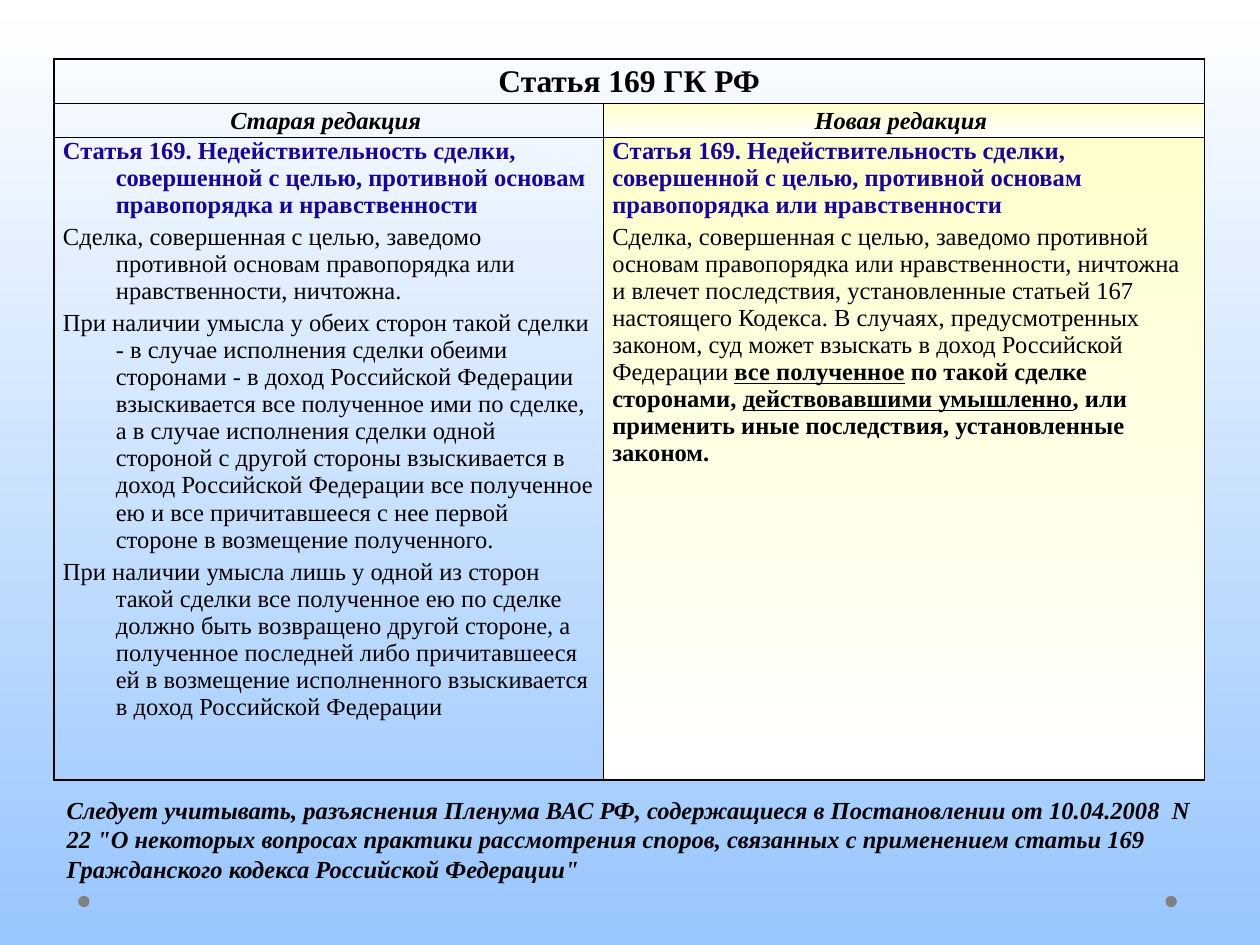
from dataclasses import dataclass

from lxml import etree
from pptx import Presentation
from pptx.dml.color import RGBColor
from pptx.enum.shapes import MSO_SHAPE
from pptx.enum.text import PP_ALIGN
from pptx.oxml.ns import qn
from pptx.util import Emu, Inches, Pt

FONT = "Times New Roman"
BLACK, BLUE, GRAY = "000000", "1704A0", "808080"
WHITE, CREAM, SKY = "FFFFFF", "FFFFCC", "98C6FE"
OVAL = MSO_SHAPE.OVAL
CENTER = PP_ALIGN.CENTER
BLANK_LAYOUT = 6

LEFT, TOP, WIDTH = 0.43, 0.47, 9.14
COLUMN_WIDTHS = (4.36, 4.77)
ROW_HEIGHTS = (0.35, 0.27, 5.1)
HANGING = 0.42


@dataclass(frozen=True)
class Run:
    text: str
    bold: bool = False
    underline: bool = False


@dataclass(frozen=True)
class Block:
    """One paragraph with its formatting."""
    runs: tuple[Run, ...]
    size: int = 14
    color: str = BLACK
    italic: bool = False
    centered: bool = False
    hanging: float = 0
    space_before: float = 0


def heading(text: str, size: int = 14, italic: bool = True) -> Block:
    return Block((Run(text, bold=True),), size, italic=italic, centered=True)


def body(*runs: Run, color: str = BLACK, hanging: float = 0) -> Block:
    return Block(runs, color=color, hanging=hanging, space_before=2.8)


OLD_TEXT = (
    body(Run("Статья 169. Недействительность сделки, совершенной с целью, противной "
             "основам правопорядка и нравственности", bold=True),
         color=BLUE, hanging=HANGING),
    body(Run("Сделка, совершенная с целью, заведомо противной основам правопорядка "
             "или нравственности, ничтожна."), hanging=HANGING),
    body(Run("При наличии умысла у обеих сторон такой сделки - в случае исполнения "
             "сделки обеими сторонами - в доход Российской Федерации взыскивается все "
             "полученное ими по сделке, а в случае исполнения сделки одной стороной с "
             "другой стороны взыскивается в доход Российской Федерации все полученное "
             "ею и все причитавшееся с нее первой стороне в возмещение полученного."),
         hanging=HANGING),
    body(Run("При наличии умысла лишь у одной из сторон такой сделки все полученное ею "
             "по сделке должно быть возвращено другой стороне, а полученное последней "
             "либо причитавшееся ей в возмещение исполненного взыскивается в доход "
             "Российской Федерации"), hanging=HANGING),
)
NEW_TEXT = (
    body(Run("Статья 169. Недействительность сделки, совершенной с целью, противной "
             "основам правопорядка или нравственности", bold=True), color=BLUE),
    body(Run("Сделка, совершенная с целью, заведомо противной основам правопорядка или "
             "нравственности, ничтожна и влечет последствия, установленные статьей 167 "
             "настоящего Кодекса. В случаях, предусмотренных законом, суд может "
             "взыскать в доход Российской Федерации "),
         Run("все полученное", bold=True, underline=True),
         Run(" по такой сделке сторонами, ", bold=True),
         Run("действовавшими умышленно", bold=True, underline=True),
         Run(", или применить иные последствия, установленные законом.", bold=True)),
)
ROWS = (
    ((heading("Статья 169 ГК РФ", size=18, italic=False),), ()),
    ((heading("Старая редакция "),), (heading("Новая редакция "),)),
    (OLD_TEXT, NEW_TEXT),
)
NOTE = Block(
    (Run("Следует учитывать, разъяснения Пленума ВАС РФ, содержащиеся в Постановлении "
         "от 10.04.2008  N 22 \"О некоторых вопросах практики рассмотрения споров, "
         "связанных с применением статьи 169 Гражданского кодекса Российской "
         "Федерации\"", bold=True),),
    italic=True, space_before=7)


def rgb(color: str) -> RGBColor:
    return RGBColor.from_string(color)


def fill_downwards(fill, top: str, bottom: str) -> None:
    fill.gradient()
    fill.gradient_angle = 270
    for stop, color, position in zip(fill.gradient_stops, (top, bottom), (0, 1)):
        stop.color.rgb = rgb(color)
        stop.position = position


def write_blocks(text_frame, blocks: tuple[Block, ...]) -> None:
    for index, block in enumerate(blocks):
        paragraph = text_frame.add_paragraph() if index else text_frame.paragraphs[0]
        font = paragraph.font
        font.name, font.size, font.italic = FONT, Pt(block.size), block.italic
        font.color.rgb = rgb(block.color)
        if block.centered:
            paragraph.alignment = CENTER
            paragraph.line_spacing = 1.15
        if block.space_before:
            paragraph.space_before = Pt(block.space_before)
        if block.hanging:
            properties = paragraph._p.get_or_add_pPr()
            properties.set("marL", str(Inches(block.hanging)))
            properties.set("indent", str(-Inches(block.hanging)))
        for part in block.runs:
            run = paragraph.add_run()
            run.text = part.text
            run.font.bold = part.bold
            if part.underline:
                run.font.underline = True


def add_borders(cell) -> None:
    properties = cell._tc.get_or_add_tcPr()
    for index, side in enumerate(("a:lnL", "a:lnR", "a:lnT", "a:lnB")):
        line = etree.Element(qn(side), w=str(Pt(1)))
        solid = etree.SubElement(line, qn("a:solidFill"))
        etree.SubElement(solid, qn("a:srgbClr"), val=BLACK)
        properties.insert(index, line)


def add_comparison(slide) -> None:
    table = slide.shapes.add_table(
        len(ROW_HEIGHTS), len(COLUMN_WIDTHS), Inches(LEFT), Inches(TOP),
        Inches(WIDTH), Inches(sum(ROW_HEIGHTS))).table
    table.first_row = table.horz_banding = False
    for column, width in zip(table.columns, COLUMN_WIDTHS):
        column.width = Inches(width)
    for row, height in zip(table.rows, ROW_HEIGHTS):
        row.height = Inches(height)
    table.cell(0, 0).merge(table.cell(0, 1))

    for row_index, row in enumerate(ROWS):
        for column_index, blocks in enumerate(row):
            cell = table.cell(row_index, column_index)
            cell.margin_left = cell.margin_right = Inches(0.07)
            cell.margin_top = cell.margin_bottom = Emu(0)
            if row_index and column_index:
                fill_downwards(cell.fill, CREAM, WHITE)
            else:
                cell.fill.background()
            add_borders(cell)
            write_blocks(cell.text_frame, blocks)


def add_note(slide) -> None:
    box = slide.shapes.add_textbox(Inches(LEFT), Inches(6.26), Inches(WIDTH), Inches(0.8))
    box.text_frame.word_wrap = True
    write_blocks(box.text_frame, (NOTE,))


def add_dot(slide, left: float) -> None:
    dot = slide.shapes.add_shape(OVAL, Inches(left), Inches(7.11), Inches(0.09), Inches(0.09))
    dot.shadow.inherit = False
    dot.fill.solid()
    dot.fill.fore_color.rgb = rgb(GRAY)
    dot.line.fill.background()


def main() -> None:
    presentation = Presentation()
    presentation.slide_width, presentation.slide_height = Inches(10), Inches(7.5)
    slide = presentation.slides.add_slide(presentation.slide_layouts[BLANK_LAYOUT])
    fill_downwards(slide.background.fill, WHITE, SKY)
    for left in (0.62, 9.25):
        add_dot(slide, left)
    add_comparison(slide)
    add_note(slide)
    presentation.save("out.pptx")


if __name__ == "__main__":
    main()
